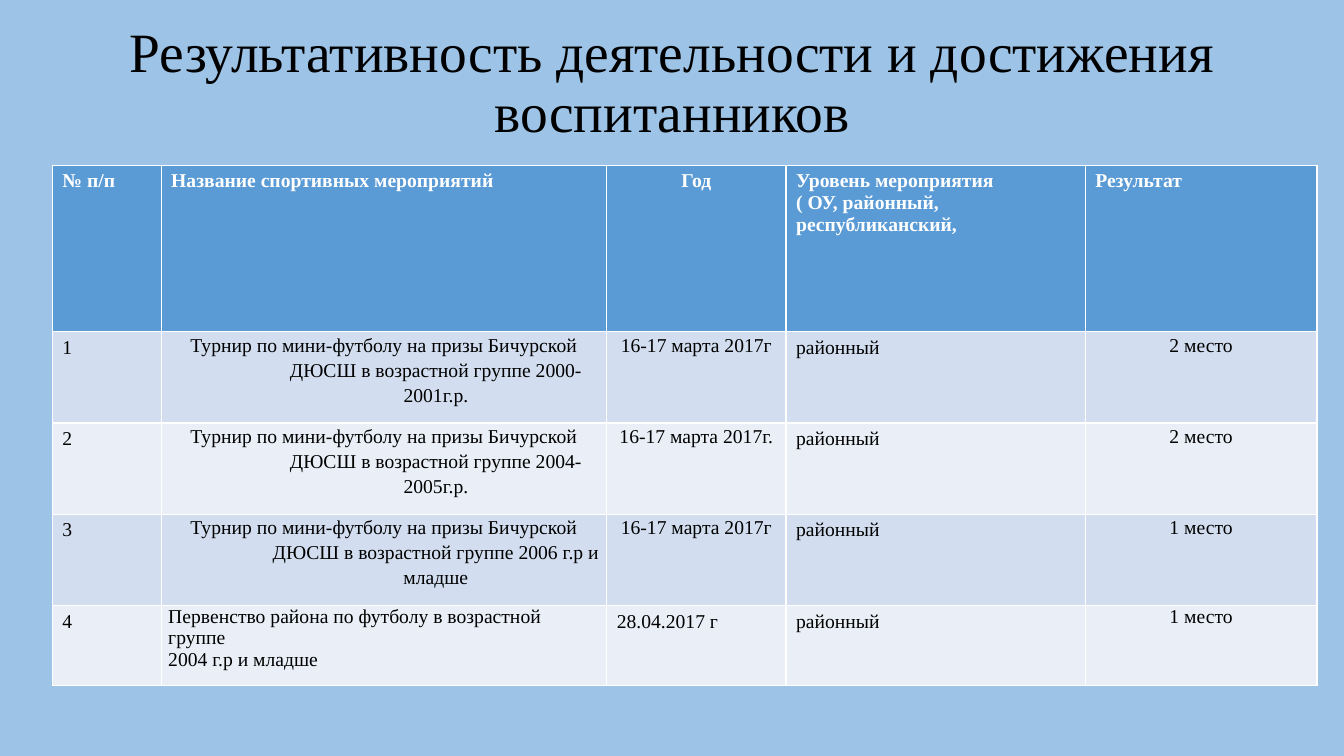
from pptx import Presentation
from pptx.dml.color import RGBColor
from pptx.enum.text import MSO_ANCHOR, MSO_AUTO_SIZE, PP_ALIGN
from pptx.util import Cm, Pt

BACKGROUND = RGBColor(0x9D, 0xC3, 0xE6)
HEADER_FILL = RGBColor(0x5B, 0x9B, 0xD5)
ODD_FILL = RGBColor(0xD2, 0xDE, 0xEF)
EVEN_FILL = RGBColor(0xEA, 0xEF, 0xF7)
WHITE = RGBColor(0xFF, 0xFF, 0xFF)
BLACK = RGBColor(0x00, 0x00, 0x00)
FONT = "Times New Roman"
CENTER = PP_ALIGN.CENTER
MIDDLE = MSO_ANCHOR.MIDDLE
NO_AUTOFIT = MSO_AUTO_SIZE.NONE

TITLE = "Результативность деятельности и достижения воспитанников\v"
HEADERS = [
    "№ п/п",
    "Название спортивных мероприятий",
    "Год",
    "Уровень мероприятия\n( ОУ, районный, республиканский,",
    "Результат",
]
TOURNAMENT = "Турнир по мини-футболу на призы Бичурской ДЮСШ в возрастной группе "
CHAMPIONSHIP = "Первенство района по футболу в возрастной группе\n2004 г.р и младше"
EVENTS = [
    (TOURNAMENT + "2000-2001г.р.", "16-17 марта 2017г", "2 место"),
    (TOURNAMENT + "2004-2005г.р.", "16-17 марта 2017г.", "2 место"),
    (TOURNAMENT + "2006 г.р и младше", "16-17 марта 2017г", "1 место"),
    (CHAMPIONSHIP, "28.04.2017 г", "1 место"),
]
LEVEL = "районный"
COLUMN_WIDTHS = [2.74, 11.23, 4.52, 7.54, 5.84]
ROW_HEIGHTS = [4.19, 2.3, 2.3, 2.3, 2.01]
NAME, YEAR, RESULT = 1, 2, 4


def format_runs(paragraph, size, color, bold=False):
    for run in paragraph.runs:
        run.font.name = FONT
        run.font.size = Pt(size)
        run.font.bold = bold
        run.font.color.rgb = color


def add_title(slide, left, top, width, height):
    title = slide.shapes.title
    title.left, title.top, title.width, title.height = left, top, width, height
    frame = title.text_frame
    frame.text = TITLE
    frame.word_wrap = True
    frame.auto_size = NO_AUTOFIT
    frame.vertical_anchor = MIDDLE
    paragraph = frame.paragraphs[0]
    paragraph.alignment = CENTER
    paragraph.line_spacing = 0.9
    format_runs(paragraph, 39.6, BLACK)


def fill_cell(cell, text, fill, color, bold=False):
    cell.text = text
    cell.fill.solid()
    cell.fill.fore_color.rgb = fill
    for paragraph in cell.text_frame.paragraphs:
        format_runs(paragraph, 14, color, bold)


def remove_padding(cell):
    cell.margin_left = cell.margin_right = Cm(0.18)
    cell.margin_top = cell.margin_bottom = 0


def center_cell(cell, line_spacing=None):
    for paragraph in cell.text_frame.paragraphs:
        paragraph.alignment = CENTER
        paragraph.line_spacing = line_spacing


def hang_indent(cell, indent):
    properties = cell.text_frame.paragraphs[0]._p.get_or_add_pPr()
    properties.set("marL", str(indent))
    properties.set("indent", str(-indent))


def fill_event_row(table, number, event):
    name, year, result = event
    fill = ODD_FILL if number % 2 else EVEN_FILL
    for column, text in enumerate([str(number), name, year, LEVEL, result]):
        fill_cell(table.cell(number, column), text, fill, BLACK)

    is_tournament = name.startswith(TOURNAMENT)
    name_cell, year_cell, result_cell = (
        table.cell(number, column) for column in (NAME, YEAR, RESULT)
    )
    remove_padding(name_cell)
    remove_padding(result_cell)
    center_cell(result_cell, 1.15 if is_tournament else None)
    if is_tournament:
        remove_padding(year_cell)
        center_cell(year_cell, 1.15)
        center_cell(name_cell, 1.15)
        hang_indent(name_cell, Cm(2.62))


def add_results_table(slide, left, top, width, height):
    table = slide.shapes.add_table(
        len(ROW_HEIGHTS), len(COLUMN_WIDTHS), left, top, width, height
    ).table
    for column, share in zip(table.columns, COLUMN_WIDTHS):
        column.width = int(width * share / sum(COLUMN_WIDTHS))
    for row, share in zip(table.rows, ROW_HEIGHTS):
        row.height = int(height * share / sum(ROW_HEIGHTS))
    for column, text in enumerate(HEADERS):
        fill_cell(table.cell(0, column), text, HEADER_FILL, WHITE, bold=True)
    center_cell(table.cell(0, YEAR))
    for number, event in enumerate(EVENTS, start=1):
        fill_event_row(table, number, event)


def main():
    presentation = Presentation()
    presentation.slide_width = Cm(33.87)
    presentation.slide_height = Cm(19.05)
    slide = presentation.slides.add_slide(presentation.slide_layouts[5])
    slide.background.fill.solid()
    slide.background.fill.fore_color.rgb = BACKGROUND
    add_title(slide, Cm(2.33), Cm(1.01), Cm(29.21), Cm(4.11))
    add_results_table(slide, Cm(1.32), Cm(4.17), Cm(31.87), Cm(13.1))
    presentation.save("out.pptx")


if __name__ == "__main__":
    main()
